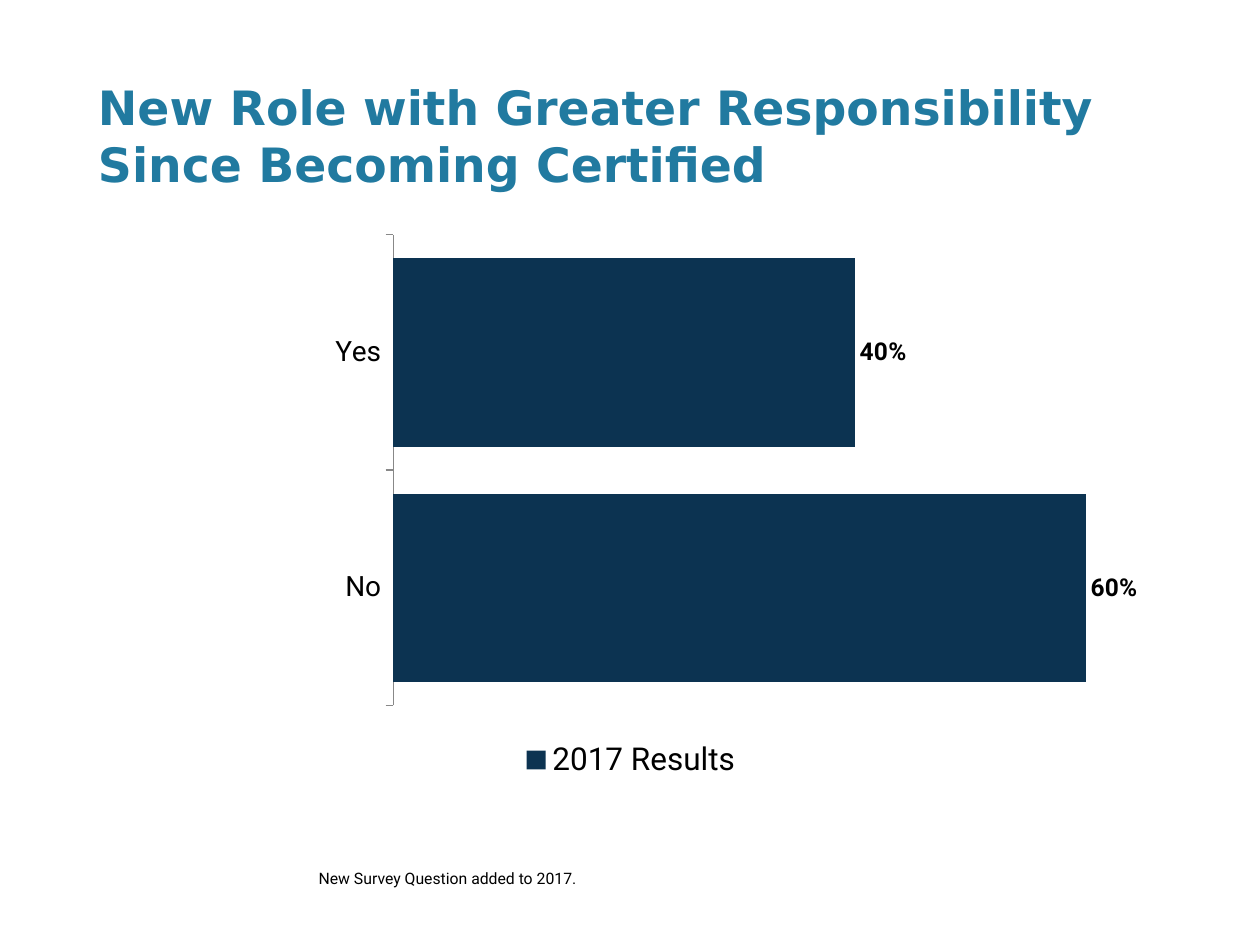
from lxml import etree
from pptx import Presentation
from pptx import util as u
from pptx.chart.data import CategoryChartData
from pptx.dml.color import RGBColor
from pptx.enum import chart as c
from pptx.enum import text
from pptx.oxml import ns

NAVY, TEAL, GREY, BLACK = "0C3351", "217AA0", "888888", "000000"


def color(value):
    return RGBColor.from_string(value)


def set_font(font, size, name="Roboto", fill=BLACK, bold=False):
    font.size = u.Pt(size)
    font.name = name
    font.bold = bold
    font.color.rgb = color(fill)


def add_text(slide, box, wording, anchor, left_inset=7.2, **style):
    shape = slide.shapes.add_textbox(*map(u.Pt, box))
    frame = shape.text_frame
    frame.word_wrap = True
    frame.vertical_anchor = anchor
    frame.margin_left = u.Pt(left_inset)
    frame.text = wording
    set_font(frame.paragraphs[0].runs[0].font, **style)


def set_inner_plot(chart, left, top, width, height):
    """Fix the plot area, in fractions of the chart."""
    plot_area = chart.plots[0]._element.getparent()
    for old in plot_area.findall(ns.qn("c:layout")):
        plot_area.remove(old)
    layout = etree.Element(ns.qn("c:layout"))
    manual = etree.SubElement(layout, ns.qn("c:manualLayout"))
    settings = [("layoutTarget", "inner"), ("xMode", "edge"), ("yMode", "edge"),
                ("x", left), ("y", top), ("w", width), ("h", height)]
    for tag, value in settings:
        etree.SubElement(manual, ns.qn(f"c:{tag}")).set("val", str(value))
    plot_area.insert(0, layout)


def add_results_chart(slide, box):
    data = CategoryChartData(number_format="0%")
    data.categories = ["No", "Yes"]
    data.add_series("2017 Results", [0.6, 0.4])
    chart = slide.shapes.add_chart(
        c.XL_CHART_TYPE.BAR_CLUSTERED, *map(u.Pt, box), data).chart
    chart.has_title = False
    set_font(chart.font, 18)
    set_inner_plot(chart, 0.3, 0.03, 0.68, 0.83)

    # Bars and their values
    plot = chart.plots[0]
    plot.gap_width = 25
    plot.vary_by_categories = False
    series = plot.series[0]
    series.format.fill.solid()
    series.format.fill.fore_color.rgb = color(NAVY)
    labels = series.data_labels
    labels.show_value = True
    labels.number_format = "0%"
    labels.number_format_is_linked = False
    labels.position = c.XL_LABEL_POSITION.OUTSIDE_END
    set_font(labels.font, 14, bold=True)

    # Axes
    category_axis = chart.category_axis
    category_axis.major_tick_mark = c.XL_TICK_MARK.OUTSIDE
    category_axis.format.line.color.rgb = color(GREY)
    category_axis.format.line.width = u.Pt(0.75)
    set_font(category_axis.tick_labels.font, 16)
    value_axis = chart.value_axis
    value_axis.minimum_scale, value_axis.maximum_scale = 0, 0.7
    value_axis.has_major_gridlines = False
    value_axis.visible = False

    # Legend
    chart.has_legend = True
    chart.legend.position = c.XL_LEGEND_POSITION.BOTTOM
    chart.legend.include_in_layout = False
    set_font(chart.legend.font, 18)


def build_slide(presentation):
    slide = presentation.slides.add_slide(presentation.slide_layouts[6])
    # Title
    add_text(slide, (56, 45.5, 653, 63.5),
             "New Role with Greater Responsibility Since Becoming Certified",
             text.MSO_ANCHOR.MIDDLE, left_inset=0,
             size=27, name="DejaVu Sans", fill=TEAL, bold=True)
    # Survey results
    add_results_chart(slide, (21, 124.5, 679, 324))
    # Footnote
    add_text(slide, (175, 493, 637, 18), "New Survey Question added to 2017.",
             text.MSO_ANCHOR.TOP, size=9)


def main():
    presentation = Presentation()
    presentation.slide_width, presentation.slide_height = u.Pt(720), u.Pt(540)
    build_slide(presentation)
    presentation.save("out.pptx")


if __name__ == "__main__":
    main()
